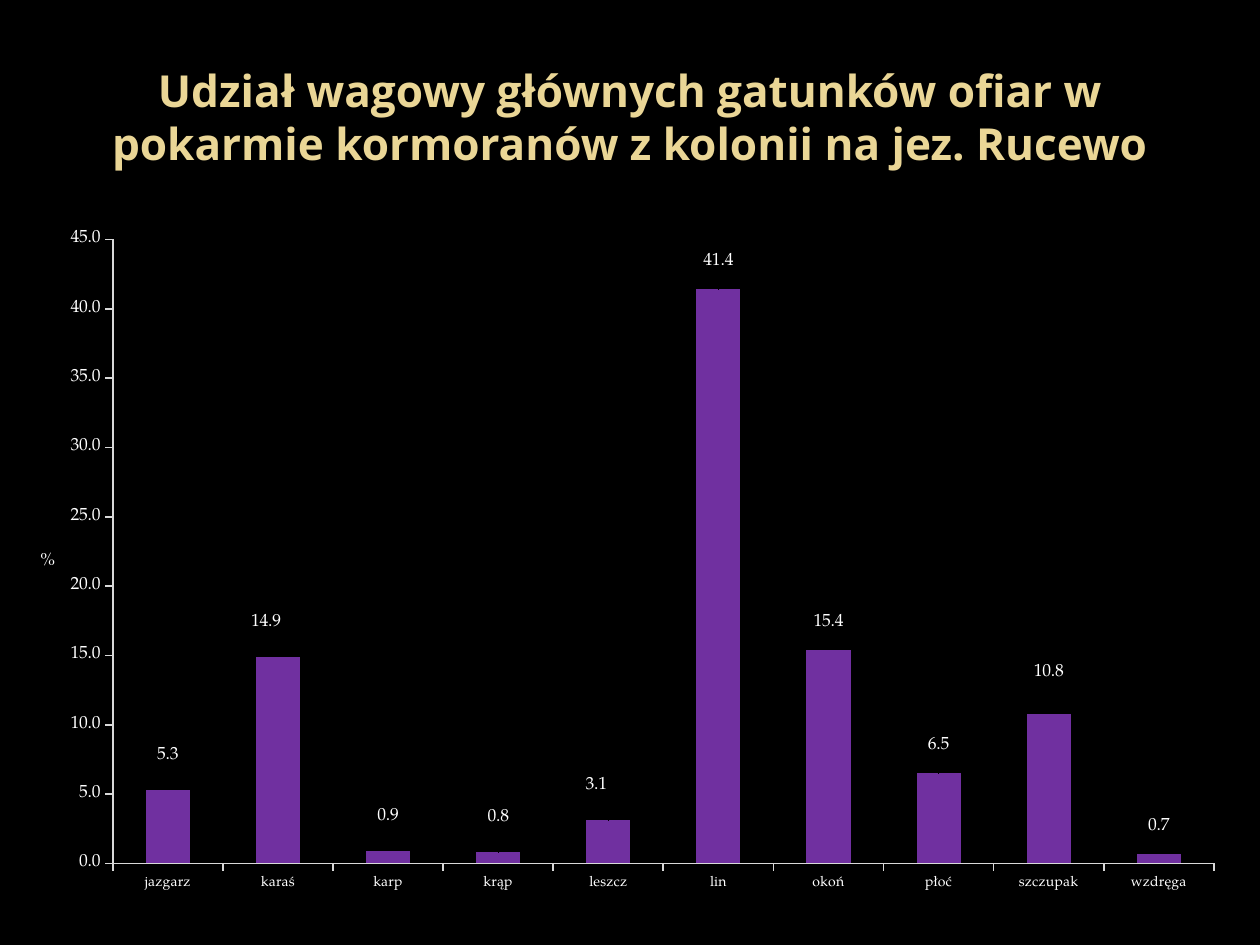
from lxml import etree
from pptx import Presentation
from pptx.chart.data import CategoryChartData
from pptx.dml.color import RGBColor
from pptx.enum.chart import XL_CHART_TYPE, XL_LABEL_POSITION, XL_TICK_LABEL_POSITION, XL_TICK_MARK
from pptx.enum.text import MSO_ANCHOR, PP_ALIGN
from pptx.oxml.ns import qn
from pptx.util import Inches, Pt

COLUMNS = XL_CHART_TYPE.COLUMN_CLUSTERED
OUTSIDE_END = XL_LABEL_POSITION.OUTSIDE_END
LOW = XL_TICK_LABEL_POSITION.LOW
OUTSIDE = XL_TICK_MARK.OUTSIDE
NONE = XL_TICK_MARK.NONE
MIDDLE = MSO_ANCHOR.MIDDLE
CENTER = PP_ALIGN.CENTER

BLACK = RGBColor(0x00, 0x00, 0x00)
WHITE = RGBColor(0xFF, 0xFF, 0xFF)
GOLD = RGBColor(0xEA, 0xD6, 0x96)
PURPLE = RGBColor(0x70, 0x30, 0xA0)
GREY = RGBColor(0xD9, 0xD9, 0xD9)
CHART_FONT = "TeX Gyre Pagella"

SPECIES = [
    ("jazgarz", 5.3, 0, -0.03),
    ("karaś", 14.9, -0.01, -0.03),
    ("karp", 0.9, 0, -0.03),
    ("krąp", 0.8, 0, -0.03),
    ("leszcz", 3.1, -0.01, -0.03),
    ("lin", 41.4, 0, -0.02),
    ("okoń", 15.4, 0, -0.02),
    ("płoć", 6.5, 0, -0.02),
    ("szczupak", 10.8, 0, -0.04),
    ("wzdręga", 0.7, 0, -0.02),
]


def set_layout(parent, position, settings):
    for old_layout in parent.findall(qn("c:layout")):
        parent.remove(old_layout)
    layout = etree.Element(qn("c:layout"))
    manual = etree.SubElement(layout, qn("c:manualLayout"))
    for name, value in settings.items():
        etree.SubElement(manual, qn(f"c:{name}")).set("val", str(value))
    parent.insert(position, layout)


def format_font(font, size):
    font.name = CHART_FONT
    font.size = Pt(size)
    font.bold = False
    font.color.rgb = WHITE


presentation = Presentation()
presentation.slide_width = Inches(10)
presentation.slide_height = Inches(7.5)
slide = presentation.slides.add_slide(presentation.slide_layouts[5])
slide.background.fill.solid()
slide.background.fill.fore_color.rgb = BLACK

title = slide.shapes.title
title.left, title.top = Inches(0.5), Inches(0.3)
title.width, title.height = Inches(9), Inches(1.25)
title.text_frame.word_wrap = True
title.text_frame.vertical_anchor = MIDDLE
paragraph = title.text_frame.paragraphs[0]
paragraph.alignment = CENTER
run = paragraph.add_run()
run.text = "Udział wagowy głównych gatunków ofiar w pokarmie kormoranów z kolonii na jez. Rucewo"
run.font.name = "Open Sans"
run.font.size = Pt(25.2)
run.font.bold = True
run.font.color.rgb = GOLD

chart_data = CategoryChartData(number_format="0.0")
chart_data.categories = [name for name, share, shift_x, shift_y in SPECIES]
chart_data.add_series("Series 1", [share for name, share, shift_x, shift_y in SPECIES])
chart = slide.shapes.add_chart(
    COLUMNS, Inches(0.2), Inches(1.82), Inches(9.53), Inches(5.39), chart_data
).chart
chart.has_title = False
chart.has_legend = False
format_font(chart.font, 10)
plot_area = chart.plots[0]._element.getparent()
set_layout(plot_area, 0, {
    "layoutTarget": "inner", "xMode": "edge", "yMode": "edge",
    "x": 0.073, "y": 0.015, "w": 0.917, "h": 0.919,
})

for axis, size in ((chart.category_axis, 8), (chart.value_axis, 10)):
    axis.has_major_gridlines = False
    axis.major_tick_mark = OUTSIDE
    axis.minor_tick_mark = NONE
    axis.format.line.color.rgb = GREY
    axis.format.line.width = Pt(1)
    format_font(axis.tick_labels.font, size)
chart.category_axis.tick_label_position = LOW

value_axis = chart.value_axis
value_axis.minimum_scale = 0
value_axis.maximum_scale = 45
value_axis.major_unit = 5
value_axis.tick_labels.number_format = "0.0"
value_axis.tick_labels.number_format_is_linked = False
axis_title = value_axis.axis_title
run = axis_title.text_frame.paragraphs[0].add_run()
run.text = "%"
format_font(run.font, 10)
axis_title._element.find(f".//{qn('a:bodyPr')}").set("rot", "0")
set_layout(axis_title._element, 1, {"xMode": "edge", "yMode": "edge", "x": 0.01, "y": 0.47})

plot = chart.plots[0]
plot.vary_by_categories = False
plot.gap_width = 150
series = plot.series[0]
series.format.fill.solid()
series.format.fill.fore_color.rgb = PURPLE
labels = series.data_labels
labels.show_value = True
labels.number_format = "#,##0.0"
labels.number_format_is_linked = False
labels.position = OUTSIDE_END
format_font(labels.font, 10)
for index in range(len(SPECIES)):
    label = series.points[index].data_label
    label.position = OUTSIDE_END
    format_font(label.font, 10)
point_labels = series._element.iter(qn("c:dLbl"))
for point_label, (name, share, shift_x, shift_y) in zip(point_labels, SPECIES):
    set_layout(point_label, 1, {"x": shift_x, "y": shift_y})

presentation.save("out.pptx")
